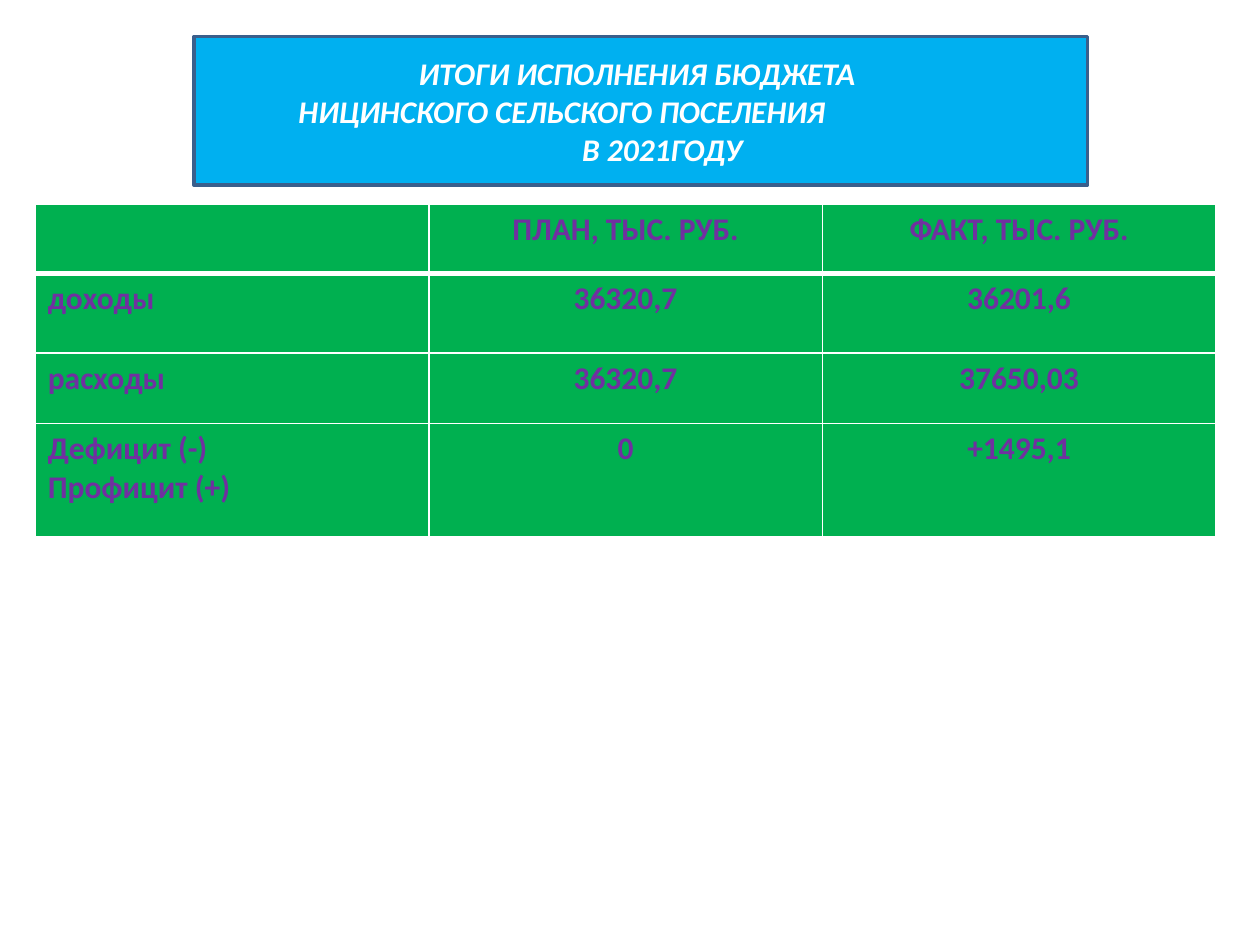
from dataclasses import dataclass
from lxml.etree import SubElement
from pptx import Presentation
from pptx.dml.color import RGBColor
from pptx.enum.shapes import MSO_SHAPE
from pptx.enum.text import MSO_ANCHOR, PP_ALIGN
from pptx.oxml.ns import qn
from pptx.util import Inches, Pt


@dataclass(frozen=True)
class Theme:
    """Hold the colours and type sizes."""
    font: str = "Calibri"
    size: int = 18
    white: str = "FFFFFF"
    blue: str = "00B0F0"
    edge: str = "3A5F8C"
    green: str = "00B050"
    violet: str = "7030A0"


THEME = Theme()
WIDE, HIGH = Inches(10), Inches(7.5)
TITLE_BOX = (0.154, 0.0387, 0.709, 0.1573)
TABLE_BOX = (0.028, 0.216, 0.937, 0.352)
TITLE = [
    ("ИТОГИ ИСПОЛНЕНИЯ БЮДЖЕТА ", PP_ALIGN.CENTER, 0),
    ("НИЦИНСКОГО СЕЛЬСКОГО ПОСЕЛЕНИЯ", PP_ALIGN.LEFT, 0.73),
    ("В 2021ГОДУ", PP_ALIGN.CENTER, 0.34),
]
ROWS = [
    ("", "ПЛАН, ТЫС. РУБ.", "ФАКТ, ТЫС. РУБ."),
    ("доходы", "36320,7", "36201,6"),
    ("расходы", "36320,7", "37650,03"),
    ("Дефицит (-)\vПрофицит (+)", "0", "+1495,1"),
]
SHARES = (0.55, 0.63, 0.56, 0.9)


def scale(box):
    """Turn shares of the slide into lengths."""
    left, top, width, height = box
    return int(left * WIDE), int(top * HIGH), int(width * WIDE), int(height * HIGH)


def style(para, color, align, italic=False):
    """Format the paragraph and its runs."""
    para.alignment = align
    for run in para.runs:
        font = run.font
        font.name, font.size = THEME.font, Pt(THEME.size)
        font.bold, font.italic = True, italic
        font.color.rgb = RGBColor.from_string(color)


def border(cell, bottom):
    """Draw white cell edges with the given bottom weight."""
    props = cell._tc.get_or_add_tcPr()
    for side, weight in zip("LRTB", (1, 1, 1, bottom)):
        line = SubElement(props, qn(f"a:ln{side}"), w=str(Pt(weight)))
        fill = SubElement(line, qn("a:solidFill"))
        SubElement(fill, qn("a:srgbClr"), val=THEME.white)


def add_title(slide, box):
    """Place the title panel in the box."""
    panel = slide.shapes.add_shape(MSO_SHAPE.RECTANGLE, *scale(box))
    panel.shadow.inherit = False
    panel.fill.solid()
    panel.fill.fore_color.rgb = RGBColor.from_string(THEME.blue)
    panel.line.color.rgb = RGBColor.from_string(THEME.edge)
    panel.line.width = Pt(2)
    frame = panel.text_frame
    frame.word_wrap = True
    frame.vertical_anchor = MSO_ANCHOR.MIDDLE
    frame.text = "\n".join(text for text, _, _ in TITLE)
    for para, (_, align, indent) in zip(frame.paragraphs, TITLE):
        style(para, THEME.white, align, italic=True)
        props = para._p.get_or_add_pPr()
        props.set("marL", str(Inches(indent)))
        props.set("indent", "0")


def add_budget(slide, box):
    """Place the budget table in the box."""
    left, top, width, height = scale(box)
    table = slide.shapes.add_table(
        len(ROWS), len(ROWS[0]), left, top, width, height).table
    for col in table.columns:
        col.width = width // len(ROWS[0])
    for r, (texts, share) in enumerate(zip(ROWS, SHARES)):
        table.rows[r].height = int(height * share / sum(SHARES))
        for c, text in enumerate(texts):
            cell = table.cell(r, c)
            cell.text_frame.text = text
            para = cell.text_frame.paragraphs[0]
            para.font.size = Pt(THEME.size)
            style(para, THEME.violet, PP_ALIGN.CENTER if c else PP_ALIGN.LEFT)
            border(cell, 1 if r else 3)
            cell.fill.solid()
            cell.fill.fore_color.rgb = RGBColor.from_string(THEME.green)


def main():
    """Build and save the slide."""
    deck = Presentation()
    deck.slide_width, deck.slide_height = WIDE, HIGH
    slide = deck.slides.add_slide(deck.slide_layouts[6])
    add_budget(slide, TABLE_BOX)
    add_title(slide, TITLE_BOX)
    deck.save("out.pptx")


if __name__ == "__main__":
    main()
